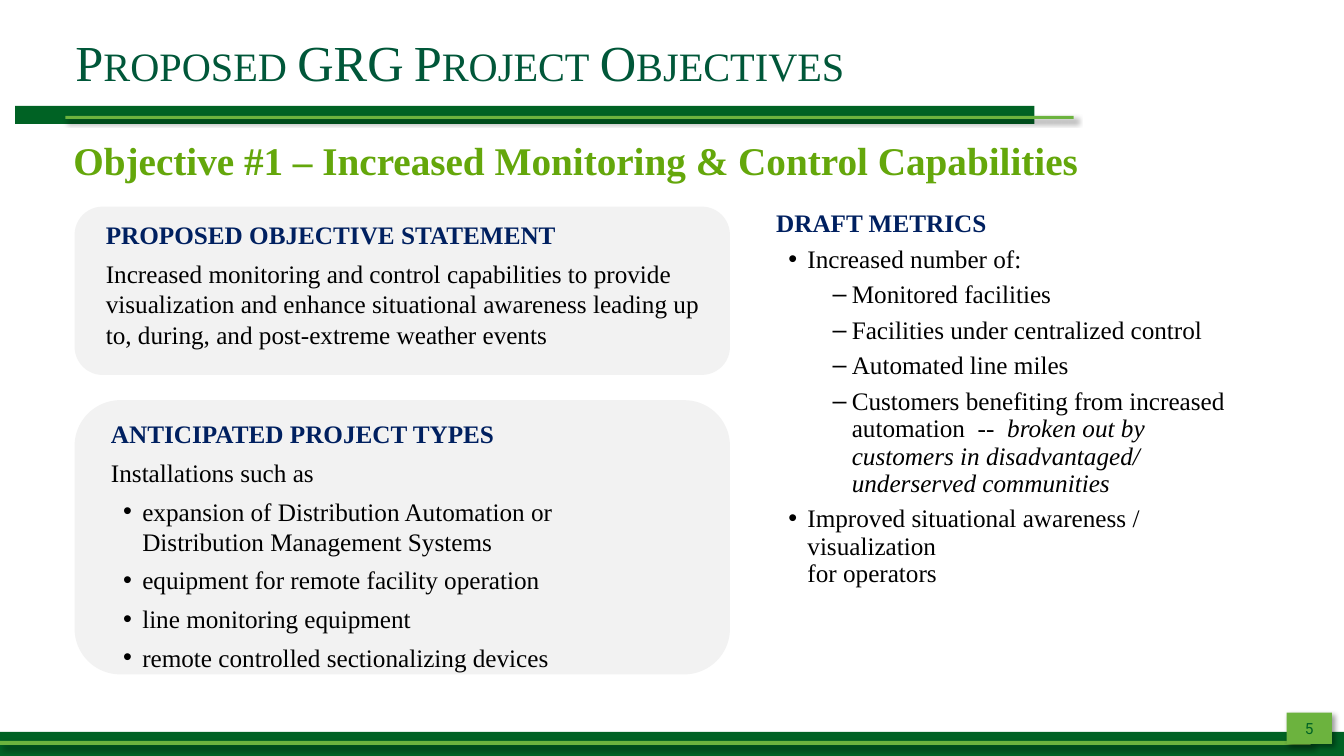
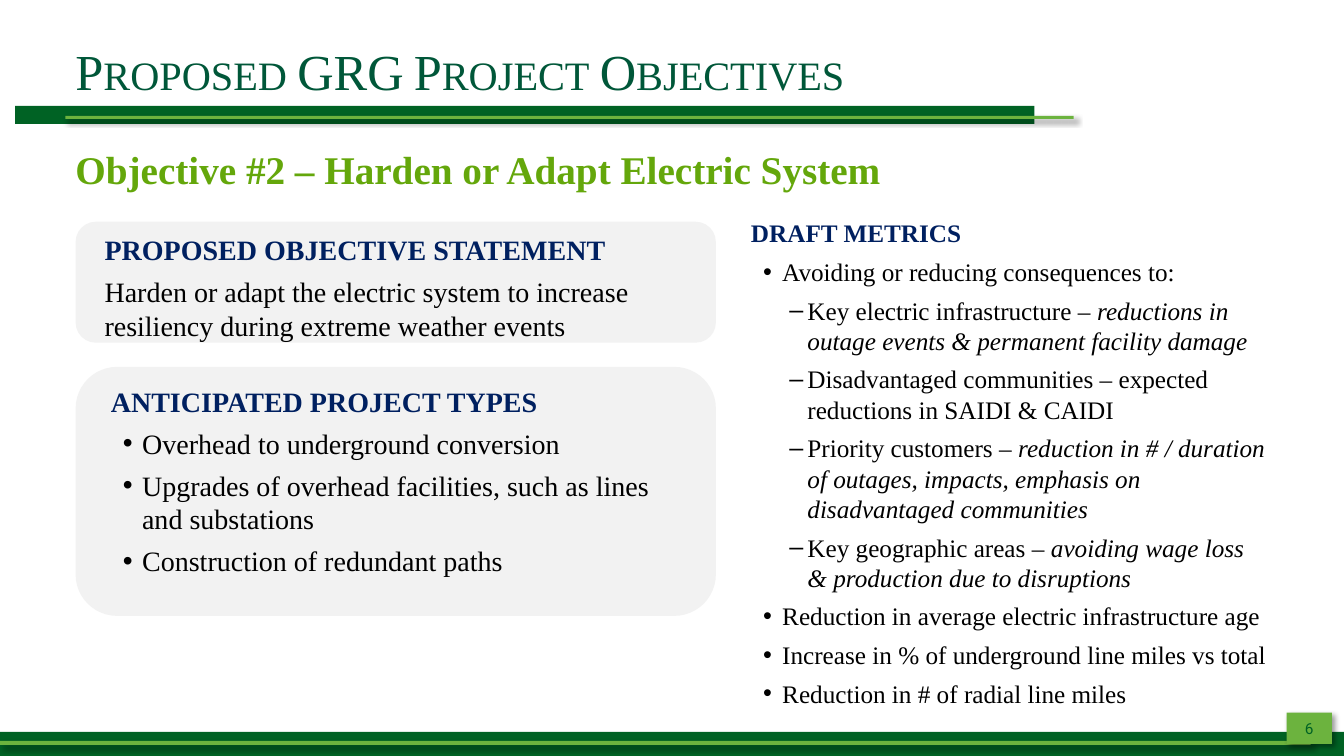
from lxml.etree import SubElement
from pptx import Presentation
from pptx.dml.color import RGBColor
from pptx.enum.shapes import MSO_SHAPE as Preset
from pptx.enum.text import MSO_ANCHOR as Anchor, PP_ALIGN as Align
from pptx.oxml.ns import qn
from pptx.util import Inches, Pt

DARK_GREEN = RGBColor(0x00, 0x62, 0x24)
LIGHT_GREEN = RGBColor(0x6C, 0xB3, 0x3E)
TITLE_GREEN = RGBColor(0x00, 0x57, 0x39)
OBJECTIVE_GREEN = RGBColor(0x64, 0xA7, 0x0B)
NAVY = RGBColor(0x00, 0x20, 0x60)
BLACK = RGBColor(0x00, 0x00, 0x00)
PANEL_GRAY = RGBColor(0xF2, 0xF2, 0xF2)

SERIF = "Times New Roman"
SANS = "Roboto"
BASE_INDENT = 0.13
BULLET_INDENT = (0.44, -0.19)


def add_run(paragraph, text, size, color, font=SERIF, bold=False, italic=False):
    run = paragraph.add_run()
    run.text = text
    run.font.name = font
    run.font.size = Pt(size)
    run.font.color.rgb = color
    run.font.bold = bold
    run.font.italic = italic
    return run


def set_indent(paragraph, margin, hanging=0, bullet=None):
    props = paragraph._p.get_or_add_pPr()
    props.set("marL", str(Inches(margin)))
    props.set("indent", str(Inches(hanging)))
    if bullet:
        SubElement(props, qn("a:buFont")).set("typeface", "Arial")
        SubElement(props, qn("a:buChar")).set("char", bullet)


def add_shape(slide, box, fill, preset=Preset.RECTANGLE):
    shape = slide.shapes.add_shape(preset, *map(Inches, box))
    shape.shadow.inherit = False
    shape.fill.solid()
    shape.fill.fore_color.rgb = fill
    shape.line.fill.background()
    return shape


def add_raised_shape(slide, box):
    shape = add_shape(slide, box, LIGHT_GREEN)
    effects = shape._element.spPr.find(qn("a:effectLst"))
    shadow = SubElement(effects, qn("a:outerShdw"), blurRad=str(Pt(4)),
                        dist=str(Pt(3)), dir=str(45 * 60000), rotWithShape="0")
    color = SubElement(shadow, qn("a:srgbClr"), val="000000")
    SubElement(color, qn("a:alpha"), val="40000")
    return shape


def add_text_frame(slide, box):
    frame = slide.shapes.add_textbox(*map(Inches, box)).text_frame
    frame.word_wrap = True
    return frame


def add_bands(slide, number):
    add_shape(slide, (0, 7.26, 13.33, 0.25), DARK_GREEN)
    add_shape(slide, (0.15, 1.05, 10.11, 0.18), DARK_GREEN)
    add_raised_shape(slide, (0.65, 1.15, 10, 0.03))
    add_raised_shape(slide, (0, 7.35, 13, 0.04))
    badge = add_raised_shape(slide, (12.76, 7.07, 0.45, 0.31)).text_frame
    badge.vertical_anchor = Anchor.MIDDLE
    badge.paragraphs[0].alignment = Align.CENTER
    add_run(badge.paragraphs[0], str(number), 11, DARK_GREEN, SANS)


def add_title(slide, height):
    frame = add_text_frame(slide, (0.65, 0.18, 8.63, height))
    frame.vertical_anchor = Anchor.MIDDLE
    paragraph = frame.paragraphs[0]
    paragraph.line_spacing = 0.9
    run = add_run(paragraph, "Proposed GRG Project Objectives", 36, TITLE_GREEN)
    run._r.get_or_add_rPr().set("cap", "small")


def add_objective(slide, box, text):
    paragraph = add_text_frame(slide, box).paragraphs[0]
    set_indent(paragraph, BASE_INDENT)
    add_run(paragraph, text, 28, OBJECTIVE_GREEN, bold=True)


def write_section(frame, heading, items, size, dash_indent=None, spacing=None):
    first = frame.paragraphs[0]
    set_indent(first, BASE_INDENT)
    add_run(first, heading, size, NAVY, bold=True)
    for marker, text, *emphasis in items:
        paragraph = frame.add_paragraph()
        if marker == "–":
            paragraph.level = 1
            set_indent(paragraph, *dash_indent, marker)
        elif marker:
            set_indent(paragraph, *BULLET_INDENT, marker)
        else:
            set_indent(paragraph, BASE_INDENT)
        for index, line in enumerate(text.split("\n")):
            if index:
                paragraph.add_line_break()
            add_run(paragraph, line, size, BLACK)
        for phrase in emphasis:
            add_run(paragraph, phrase, size, BLACK, italic=True)
    for paragraph in frame.paragraphs:
        paragraph.alignment = Align.LEFT
        paragraph.space_after = Pt(6)
        if spacing:
            paragraph.line_spacing = spacing


def add_panel(slide, box, heading, items, size):
    frame = add_shape(slide, box, PANEL_GRAY, Preset.ROUNDED_RECTANGLE).text_frame
    frame.word_wrap = True
    frame.vertical_anchor = Anchor.TOP
    write_section(frame, heading, items, size)


def add_metrics(slide, box, items, dash_indent, spacing=None):
    frame = add_text_frame(slide, box)
    write_section(frame, "DRAFT METRICS", items, 18, dash_indent, spacing)


def add_objective_slide(deck, content):
    slide = deck.slides.add_slide(deck.slide_layouts[6])
    add_bands(slide, content["number"])
    add_title(slide, content["title_height"])
    add_objective(slide, *content["objective"])
    size = content["panel_size"]
    box, statement = content["statement"]
    add_panel(slide, box, "PROPOSED OBJECTIVE STATEMENT", [("", statement)], size)
    box, projects = content["projects"]
    add_panel(slide, box, "ANTICIPATED PROJECT TYPES", projects, size)
    add_metrics(slide, *content["metrics"])


MONITORING = {
    "number": 5,
    "title_height": 0.94,
    "panel_size": 18,
    "objective": (
        (0.5, 1.3, 12.18, 0.57),
        "Objective #1 – Increased Monitoring & Control Capabilities",
    ),
    "statement": (
        (0.74, 2.05, 6.5, 1.67),
        "Increased monitoring and control capabilities to provide visualization "
        "and enhance situational awareness leading up to, during, and "
        "post-extreme weather events",
    ),
    "projects": ((0.74, 3.97, 6.5, 2.72), [
        ("", "Installations such as"),
        ("•", "expansion of Distribution Automation or \nDistribution Management Systems"),
        ("•", "equipment for remote facility operation"),
        ("•", "line monitoring equipment"),
        ("•", "remote controlled sectionalizing devices"),
    ]),
    "metrics": ((7.47, 2.04, 5, 4.18), [
        ("•", "Increased number of:"),
        ("–", "Monitored facilities"),
        ("–", "Facilities under centralized control"),
        ("–", "Automated line miles"),
        ("–", "Customers benefiting from increased automation  --  ",
         "broken out by customers in disadvantaged/ underserved communities"),
        ("•", "Improved situational awareness / visualization \nfor operators"),
    ], (0.88, -0.19), 0.9),
}

HARDENING = {
    "number": 6,
    "title_height": 1.12,
    "panel_size": 20,
    "objective": (
        (0.52, 1.39, 12.46, 0.57),
        "Objective #2 – Harden or Adapt Electric System",
    ),
    "statement": (
        (0.75, 2.2, 6.35, 1.2),
        "Harden or adapt the electric system to increase resiliency during "
        "extreme weather events",
    ),
    "projects": ((0.75, 3.64, 6.35, 2.47), [
        ("•", "Overhead to underground conversion"),
        ("•", "Upgrades of overhead facilities, such as lines \nand substations"),
        ("•", "Construction of redundant paths"),
    ]),
    "metrics": ((7.22, 2.11, 5.47, 4.96), [
        ("•", "Avoiding or reducing consequences to:"),
        ("–", "Key electric infrastructure – ",
         "reductions in outage events & permanent facility damage"),
        ("–", "Disadvantaged communities – expected reductions in SAIDI & CAIDI"),
        ("–", "Priority customers – ",
         "reduction in # / duration of outages, impacts, emphasis on "
         "disadvantaged communities"),
        ("–", "Key geographic areas – ",
         "avoiding wage loss & production due to disruptions"),
        ("•", "Reduction in average electric infrastructure age"),
        ("•", "Increase in % of underground line miles vs total"),
        ("•", "Reduction in # of radial line miles"),
    ], (0.69, -0.18)),
}


def main():
    deck = Presentation()
    deck.slide_width = Inches(13.33)
    deck.slide_height = Inches(7.5)
    for content in (MONITORING, HARDENING):
        add_objective_slide(deck, content)
    deck.save("out.pptx")


if __name__ == "__main__":
    main()
